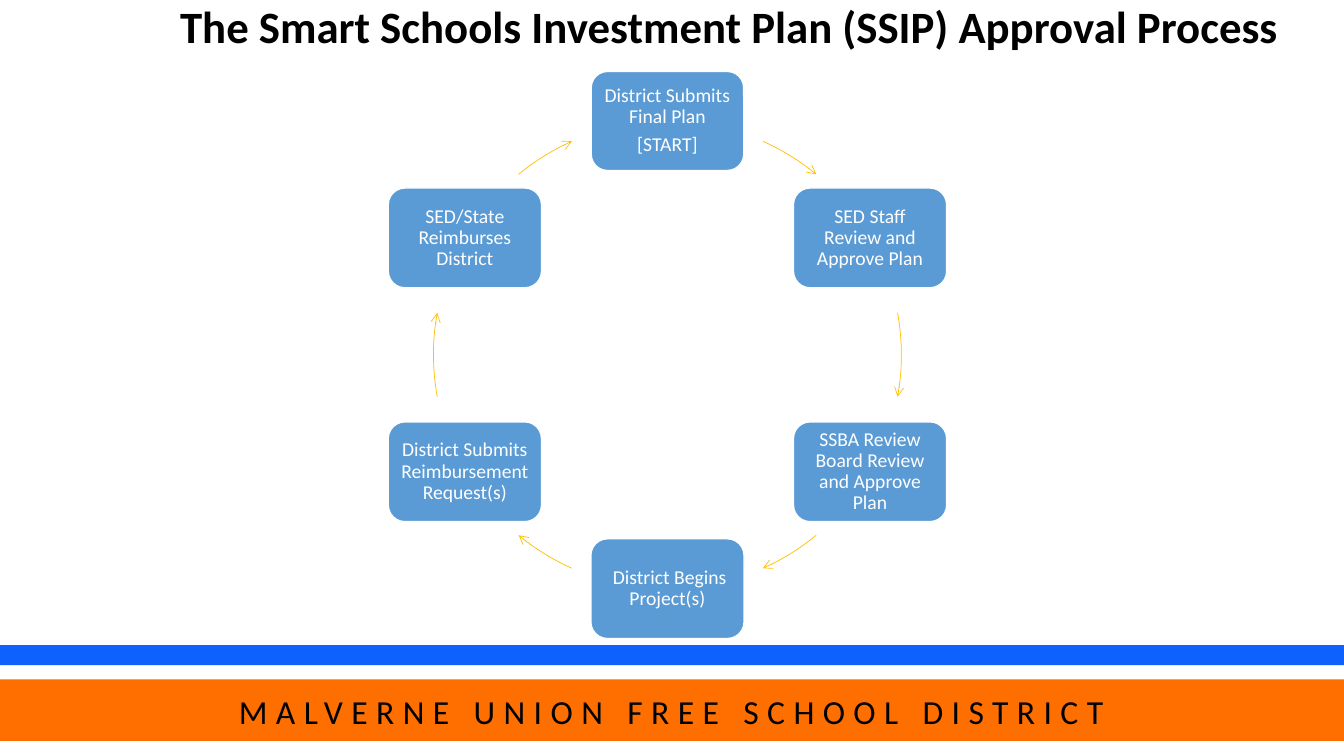
from math import cos, radians, sin

from lxml import etree
from pptx import Presentation
from pptx.dml.color import RGBColor
from pptx.enum.shapes import MSO_SHAPE
from pptx.enum.text import MSO_ANCHOR, PP_ALIGN
from pptx.oxml.ns import qn
from pptx.util import Inches, Pt

RECTANGLE = MSO_SHAPE.RECTANGLE
ROUNDED = MSO_SHAPE.ROUNDED_RECTANGLE
ARC = MSO_SHAPE.ARC
CENTER = PP_ALIGN.CENTER
MIDDLE = MSO_ANCHOR.MIDDLE
TOP = MSO_ANCHOR.TOP

COLORS = {
    "orange": "FF6F00",
    "blue": "0E61FD",
    "step": "5B9BD5",
    "arrow": "FFC000",
    "white": "FFFFFF",
    "black": "000000",
}
FONT = "Calibri"

# Steps run clockwise from the top of the ring
STEPS = [
    ["District Submits Final Plan", "[START]"],
    ["SED Staff Review and Approve Plan"],
    ["SSBA Review Board Review and Approve Plan"],
    [" District Begins Project(s)"],
    ["District Submits Reimbursement Request(s)"],
    ["SED/State Reimburses District"],
]
STEP_SIZE = (1.52, 0.99)
# Middle angle and half sweep of the arrow after each step, in degrees
ARROWS = [(-58.2, 7.7), (0, 10.3), (58.2, 7.7),
          (121.8, 7.7), (180, 10.3), (238.2, 7.7)]
# Arc adjustments count 60000 units a degree, in hundred thousands
ARC_UNIT = 0.6


def color(name):
    return RGBColor.from_string(COLORS[name])


def write(frame, lines, size, ink, bold=False, tracking=None, **para_format):
    for index, line in enumerate(lines):
        para = frame.paragraphs[0] if index == 0 else frame.add_paragraph()
        for name, value in {"alignment": CENTER, **para_format}.items():
            setattr(para, name, value)
        span = para.add_run()
        span.text = line
        for name, value in {"name": FONT, "size": Pt(size), "bold": bold}.items():
            setattr(span.font, name, value)
        span.font.color.rgb = color(ink)
        if tracking:
            span.font._element.set("spc", str(tracking * 100))


def add_panel(page, kind, box, fill):
    panel = page.shapes.add_shape(kind, *map(Inches, box))
    panel.shadow.inherit = False
    panel.fill.solid()
    panel.fill.fore_color.rgb = color(fill)
    panel.line.fill.background()
    return panel


def add_label(page, box, text, size, wrap, **text_format):
    label = page.shapes.add_textbox(*map(Inches, box))
    label.text_frame.word_wrap = wrap
    label.text_frame.vertical_anchor = TOP
    write(label.text_frame, [text], size, "black", **text_format)


def add_footer(page, box):
    left, top, width, height = box
    add_panel(page, RECTANGLE, (left, top + 0.34, width, height - 0.34), "orange")
    add_panel(page, RECTANGLE, (left, top, width, 0.2), "blue")
    add_label(page, (left + 0.22, top + 0.41, width - 0.45, 0.5),
              "MALVERNE UNION FREE SCHOOL DISTRICT", 24, True, tracking=6)


def add_step(page, center, lines, border):
    width, height = STEP_SIZE
    box = (center[0] - width / 2, center[1] - height / 2, width, height)
    step = add_panel(page, ROUNDED, box, "step")
    step.line.color.rgb = color("white")
    step.line.width = Pt(border)
    frame = step.text_frame
    margins = ("margin_left", "margin_top", "margin_right", "margin_bottom")
    for name in margins:
        setattr(frame, name, Inches(0.06))
    frame.word_wrap = True
    frame.vertical_anchor = MIDDLE
    write(frame, lines, 14, "white", line_spacing=0.9, space_after=Pt(5))


def add_arc_arrow(page, box, start, end):
    arrow = page.shapes.add_shape(ARC, *map(Inches, box))
    for index, degrees in enumerate((start, end)):
        arrow.adjustments[index] = degrees % 360 * ARC_UNIT
    arrow.shadow.inherit = False
    arrow.fill.background()
    arrow.line.color.rgb = color("arrow")
    arrow.line.width = Pt(0.5)
    etree.SubElement(arrow.line._get_or_add_ln(), qn("a:tailEnd"), type="arrow")


def add_cycle(page, box):
    left, top, diameter, _ = box
    radius = diameter / 2
    for index, (lines, (middle, half)) in enumerate(zip(STEPS, ARROWS)):
        angle = radians(index * 360 / len(STEPS) - 90)
        center = (left + radius * (1 + cos(angle)), top + radius * (1 + sin(angle)))
        add_step(page, center, lines, 1.5 if index == 0 else 1)
        add_arc_arrow(page, box, middle - half, middle + half)


def main():
    deck = Presentation()
    deck.slide_width, deck.slide_height = Inches(13.33), Inches(7.5)
    page = deck.slides.add_slide(deck.slide_layouts[6])
    add_footer(page, (0, 6.4, 13.33, 0.95))
    add_label(page, (1.64, -0.06, 11.19, 0.64),
              "The Smart Schools Investment Plan (SSIP) Approval Process",
              32, False, bold=True)
    add_cycle(page, (4.3, 1.2, 4.64, 4.64))
    deck.save("out.pptx")


if __name__ == "__main__":
    main()
